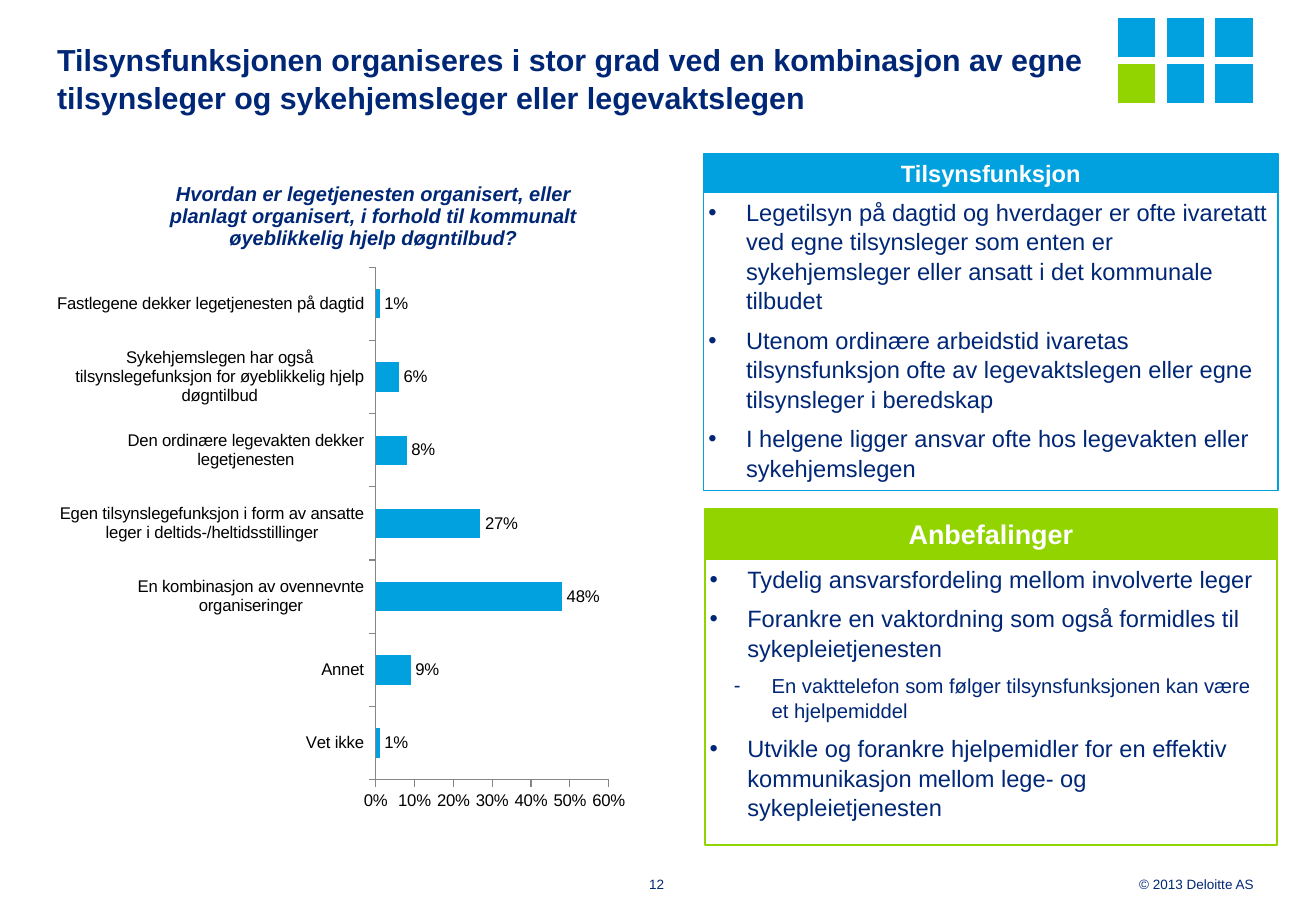
import pptx
import pptx.chart.data
import pptx.dml.color
import pptx.enum.chart
import pptx.enum.shapes
import pptx.enum.text
import pptx.oxml
import pptx.oxml.ns
import pptx.util
from lxml import etree

Inches = pptx.util.Inches
Pt = pptx.util.Pt
ALIGN = pptx.enum.text.PP_ALIGN
ANCHOR = pptx.enum.text.MSO_ANCHOR

COLORS = {
    "navy": "002776",
    "blue": "00A1DE",
    "green": "92D400",
    "white": "FFFFFF",
    "black": "000000",
    "grey": "868686",
}


class SlideBuilder:
    font_name = "Arial"

    def __init__(self, presentation):
        self.slide = presentation.slides.add_slide(presentation.slide_layouts[5])

    def color(self, name):
        return pptx.dml.color.RGBColor.from_string(COLORS[name])

    def style_font(self, font, size, color, bold=False, italic=False):
        font.name = self.font_name
        font.size = Pt(size)
        font.bold = bold
        font.italic = italic
        font.color.rgb = self.color(color)

    def style_paragraph(self, paragraph, size, color, bold=False, align=ALIGN.LEFT, spacing=None):
        paragraph.alignment = align
        if spacing is not None:
            paragraph.line_spacing = spacing
        for run in paragraph.runs:
            self.style_font(run.font, size, color, bold)

    def set_frame(self, frame, margin, anchor, wrap=True):
        frame.margin_left = frame.margin_right = Inches(margin)
        frame.margin_top = frame.margin_bottom = Inches(margin)
        frame.vertical_anchor = anchor
        frame.word_wrap = wrap
        frame.auto_size = pptx.enum.text.MSO_AUTO_SIZE.NONE

    def title(self, text, left, top, width, height):
        title = self.slide.shapes.title
        title.left, title.top = Inches(left), Inches(top)
        title.width, title.height = Inches(width), Inches(height)
        self.set_frame(title.text_frame, 0, ANCHOR.TOP)
        title.text_frame.text = text
        self.style_paragraph(title.text_frame.paragraphs[0], 18, "navy", True, spacing=1.06)

    def label(self, text, left, top, width, height, align, wrap=True):
        box = self.slide.shapes.add_textbox(
            Inches(left), Inches(top), Inches(width), Inches(height))
        self.set_frame(box.text_frame, 0, ANCHOR.MIDDLE, wrap)
        box.text_frame.text = text
        self.style_paragraph(box.text_frame.paragraphs[0], 8, "navy", align=align, spacing=Pt(11.3))

    def rectangle(self, left, top, width, height, fill, line, line_width=1):
        shape = self.slide.shapes.add_shape(
            pptx.enum.shapes.MSO_SHAPE.RECTANGLE,
            Inches(left), Inches(top), Inches(width), Inches(height))
        shape.shadow.inherit = False
        if fill:
            shape.fill.solid()
            shape.fill.fore_color.rgb = self.color(fill)
        else:
            shape.fill.background()
        shape.line.color.rgb = self.color(line)
        shape.line.width = Pt(line_width)
        return shape

    def bullet(self, paragraph, level):
        properties = paragraph._p.get_or_add_pPr()
        properties.set("marL", str(Inches(0.31 + 0.2 * level)))
        properties.set("indent", str(Inches(-0.31)))
        for tag, attribute, value in (("a:buFont", "typeface", self.font_name),
                                      ("a:buChar", "char", "•-"[level])):
            element = etree.SubElement(properties, pptx.oxml.ns.qn(tag))
            element.set(attribute, value)

    def panel(self, heading, heading_size, items, left, top, width, heading_height, body_height, color):
        header = self.rectangle(left, top, width, heading_height, color, color)
        self.set_frame(header.text_frame, 0.04, ANCHOR.MIDDLE)
        header.text_frame.text = heading
        self.style_paragraph(header.text_frame.paragraphs[0], heading_size, "white", True, ALIGN.CENTER)

        body = self.rectangle(left, top + heading_height, width, body_height, None, color)
        frame = body.text_frame
        self.set_frame(frame, 0.04, ANCHOR.TOP)
        for index, (level, text) in enumerate(items):
            paragraph = frame.add_paragraph() if index else frame.paragraphs[0]
            paragraph.text = text
            paragraph.level = level
            self.bullet(paragraph, level)
            paragraph.space_before = Pt(6 if index else 0)
            self.style_paragraph(paragraph, 14 - 2 * level, "navy", spacing=1.04)

    def manual_layout(self, parent, position, **values):
        """Place a chart part by fractions of the chart area."""
        for old in parent.findall(pptx.oxml.ns.qn("c:layout")):
            parent.remove(old)
        layout = etree.Element(pptx.oxml.ns.qn("c:layout"))
        manual = etree.SubElement(layout, pptx.oxml.ns.qn("c:manualLayout"))
        for tag, value in values.items():
            etree.SubElement(manual, pptx.oxml.ns.qn("c:" + tag)).set("val", str(value))
        parent.insert(position, layout)

    def bar_chart(self, question, answers, left, top, width, height):
        data = pptx.chart.data.CategoryChartData(number_format="0%")
        data.categories = [answer for answer, share in answers]
        data.add_series(question, [share for answer, share in answers])
        chart = self.slide.shapes.add_chart(
            pptx.enum.chart.XL_CHART_TYPE.BAR_CLUSTERED,
            Inches(left), Inches(top), Inches(width), Inches(height), data).chart
        self.style_font(chart.font, 10, "black")
        chart.has_legend = False

        chart.has_title = True
        title_frame = chart.chart_title.text_frame
        title_frame.text = question
        self.style_font(title_frame.paragraphs[0].runs[0].font, 12, "navy", True, True)
        chart.chart_title.include_in_layout = False
        self.manual_layout(chart.chart_title._element, 1, xMode="edge", yMode="edge", x=0.17, y=0.04)
        plot_area = chart._chartSpace.chart.plotArea
        self.manual_layout(plot_area, 0, layoutTarget="inner", xMode="edge", yMode="edge",
                           x=0.518, y=0.169, w=0.387, h=0.743)

        for axis in (chart.category_axis, chart.value_axis):
            axis.has_major_gridlines = False
            axis.major_tick_mark = pptx.enum.chart.XL_TICK_MARK.OUTSIDE
            axis.minor_tick_mark = pptx.enum.chart.XL_TICK_MARK.NONE
            axis.format.line.color.rgb = self.color("grey")
            axis.format.line.width = Pt(0.75)
            self.style_font(axis.tick_labels.font, 10, "black")
        chart.value_axis.minimum_scale = 0
        chart.value_axis.maximum_scale = 0.6
        chart.value_axis.major_unit = 0.1
        chart.value_axis.tick_labels.number_format = "0%"
        chart.value_axis.tick_labels.number_format_is_linked = False

        plot = chart.plots[0]
        plot.gap_width = 150
        plot.vary_by_categories = False
        fill = plot.series[0].format.fill
        fill.solid()
        fill.fore_color.rgb = self.color("blue")
        plot.has_data_labels = True
        labels = plot.data_labels
        labels.show_value = True
        labels.position = pptx.enum.chart.XL_LABEL_POSITION.OUTSIDE_END
        labels.number_format = "0%"
        labels.number_format_is_linked = False
        self.style_font(labels.font, 10, "black")


def main():
    presentation = pptx.Presentation()
    presentation.slide_width = Inches(10.83)
    presentation.slide_height = Inches(7.5)
    builder = SlideBuilder(presentation)

    # Title and footer
    builder.title("Tilsynsfunksjonen organiseres i stor grad ved en kombinasjon av egne "
                  "tilsynsleger og sykehjemsleger eller legevaktslegen", 0.47, 0.32, 8.55, 0.65)
    builder.label("© 2013 Deloitte AS", 9.36, 7.19, 0.96, 0.15, ALIGN.RIGHT, wrap=False)
    builder.label("12", 5.2, 7.19, 0.41, 0.15, ALIGN.CENTER)

    # Survey chart, listed from the bottom bar up
    builder.bar_chart(
        "Hvordan er legetjenesten organisert, eller planlagt organisert, "
        "i forhold til kommunalt øyeblikkelig hjelp døgntilbud?",
        [("Vet ikke", 0.01),
         ("Annet", 0.09),
         ("En kombinasjon av ovennevnte organiseringer", 0.48),
         ("Egen tilsynslegefunksjon i form av ansatte leger i deltids-/heltidsstillinger", 0.27),
         ("Den ordinære legevakten dekker legetjenesten", 0.08),
         ("Sykehjemslegen har også tilsynslegefunksjon for øyeblikkelig hjelp døgntilbud", 0.06),
         ("Fastlegene dekker legetjenesten på dagtid", 0.01)],
        0.47, 1.24, 5.01, 5.68)

    # Findings and recommendations
    builder.panel("Tilsynsfunksjon", 14, [
        (0, "Legetilsyn på dagtid og hverdager er ofte ivaretatt ved egne tilsynsleger som enten er "
            "sykehjemsleger eller ansatt i det kommunale tilbudet"),
        (0, "Utenom ordinære arbeidstid ivaretas tilsynsfunksjon ofte av legevaktslegen eller egne "
            "tilsynsleger i beredskap"),
        (0, "I helgene ligger ansvar ofte hos legevakten eller sykehjemslegen"),
    ], 5.79, 1.27, 4.73, 0.31, 2.46, "blue")
    builder.panel("Anbefalinger", 16, [
        (0, "Tydelig ansvarsfordeling mellom involverte leger"),
        (0, "Forankre en vaktordning som også formidles til sykepleietjenesten"),
        (1, "En vakttelefon som følger tilsynsfunksjonen kan være et hjelpemiddel"),
        (0, "Utvikle og forankre hjelpemidler for en effektiv kommunikasjon mellom lege- og "
            "sykepleietjenesten"),
    ], 5.8, 4.19, 4.71, 0.41, 2.36, "green")

    # Chapter marker: the current chapter is green
    current_chapter = 3
    for chapter in range(6):
        row, column = divmod(chapter, 3)
        fill = "green" if chapter == current_chapter else "blue"
        builder.rectangle(9.19 + 0.4 * column, 0.14 + 0.38 * row, 0.33, 0.34, fill, "white", 1.5)

    presentation.save("out.pptx")


if __name__ == "__main__":
    main()
